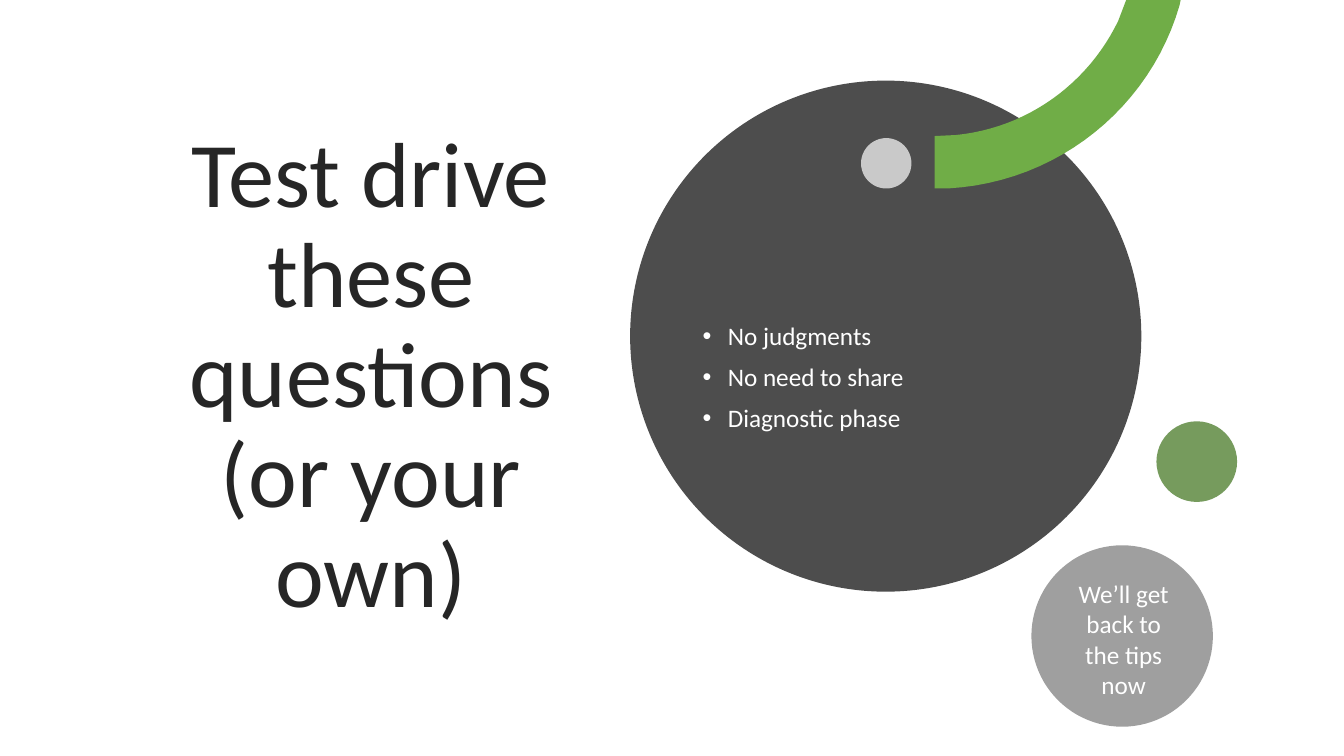
from lxml import etree
from pptx import Presentation
from pptx import util as u
from pptx.dml.color import RGBColor
from pptx.enum import shapes, text
from pptx.oxml.ns import qn

COLORS = {
    "title": "262626",
    "white": "FFFFFF",
    "disc": "4D4D4D",
    "arc": "70AD47",
    "green": "548235",
    "gray": "404040",
}
FONT = "Calibri"


def paint(shape, color, opacity=100):
    """Give a shape a plain fill without line or shadow."""
    shape.shadow.inherit = False
    shape.line.fill.background()
    shape.fill.solid()
    shape.fill.fore_color.rgb = RGBColor.from_string(COLORS[color])
    if opacity < 100:
        fill_color = shape.fill._xPr.find(qn("a:solidFill"))[0]
        etree.SubElement(fill_color, qn("a:alpha"), val=str(opacity * 1000))


def add_circle(slide, left, top, size, color, opacity=100):
    """Draw a filled circle in the square box given."""
    circle = slide.shapes.add_shape(
        shapes.MSO_SHAPE.OVAL,
        u.Inches(left), u.Inches(top), u.Inches(size), u.Inches(size))
    paint(circle, color, opacity)


def curve_points(start, control_1, control_2, end, steps=24):
    """Return the points along a cubic curve after its start."""
    points = []
    for step in range(1, steps + 1):
        t = step / steps
        weights = ((1 - t) ** 3, 3 * t * (1 - t) ** 2, 3 * t * t * (1 - t), t ** 3)
        corners = (start, control_1, control_2, end)
        points.append(tuple(
            sum(weight * corner[axis] for weight, corner in zip(weights, corners))
            for axis in (0, 1)))
    return points


def add_arc(slide, left, top):
    """Draw the green band that sweeps down from the top edge."""
    outline = [(1.9, 0), (2.44, 0), (2.43, 0.05)]
    outline += curve_points((2.43, 0.05), (2.14, 1.06), (1.23, 1.81), (0.13, 1.87))
    outline += [(0, 1.87), (0, 1.35), (0.21, 1.34)]
    outline += curve_points((0.21, 1.34), (0.92, 1.27), (1.52, 0.83), (1.82, 0.21))
    points = [(u.Inches(left + x), u.Inches(top + y)) for x, y in outline]
    builder = slide.shapes.build_freeform(*points[0])
    builder.add_line_segments(points[1:], close=True)
    paint(builder.convert_to_shape(), "arc")


def add_text(slide, box, lines, size, color, anchor, centered=True, spacing=1.0,
             bulleted=False):
    """Place paragraphs of text in the box given."""
    frame = slide.shapes.add_textbox(*map(u.Inches, box)).text_frame
    frame.word_wrap = True
    frame.vertical_anchor = anchor
    frame.text = "\n".join(lines)
    for index, paragraph in enumerate(frame.paragraphs):
        paragraph.alignment = text.PP_ALIGN.CENTER if centered else text.PP_ALIGN.LEFT
        paragraph.line_spacing = spacing
        if bulleted:
            paragraph.space_before = u.Pt(10 if index else 0)
            properties = paragraph._p.get_or_add_pPr()
            properties.set("marL", str(u.Inches(0.25)))
            properties.set("indent", str(u.Inches(-0.25)))
            etree.SubElement(properties, qn("a:buFont"), typeface="Arial")
            etree.SubElement(properties, qn("a:buChar"), char="•")
        for run in paragraph.runs:
            run.font.name = FONT
            run.font.size = u.Pt(size)
            run.font.color.rgb = RGBColor.from_string(COLORS[color])


def add_title(slide, box):
    """Write the large title on the left."""
    add_text(slide, box, ["Test drive these questions (or your own)"], 66, "title",
             text.MSO_ANCHOR.MIDDLE, spacing=0.9)


def add_main_disc(slide, left, top):
    """Draw the large disc with its dot, band and bullet list."""
    add_circle(slide, left, top, 5.07, "disc")
    add_circle(slide, left + 2.29, top + 0.57, 0.5, "white", 70)
    add_arc(slide, left + 3.02, top - 0.8)
    add_text(slide, (left + 0.62, top + 1.13, 3.92, 3.65),
             ["No judgments", "No need to share", "Diagnostic phase"], 18, "white",
             text.MSO_ANCHOR.MIDDLE, centered=False, spacing=0.9, bulleted=True)


def add_reminder(slide, left, top):
    """Draw the gray reminder disc and the green dot above it."""
    add_circle(slide, left + 1.24, top - 1.23, 0.8, "green", 80)
    add_circle(slide, left, top, 1.8, "gray", 50)
    add_text(slide, (left + 0.3, top + 0.28, 1.23, 1.31),
             ["We’ll get back to the tips now"], 18, "white", text.MSO_ANCHOR.TOP)


def main():
    """Build the slide and save it."""
    presentation = Presentation()
    presentation.slide_width = u.Inches(13.33)
    presentation.slide_height = u.Inches(7.5)
    slide = presentation.slides.add_slide(presentation.slide_layouts[6])
    add_title(slide, (1.6, 1.19, 4.16, 5.11))
    add_main_disc(slide, 6.25, 0.8)
    add_reminder(slide, 10.23, 5.41)
    presentation.save("out.pptx")


if __name__ == "__main__":
    main()
